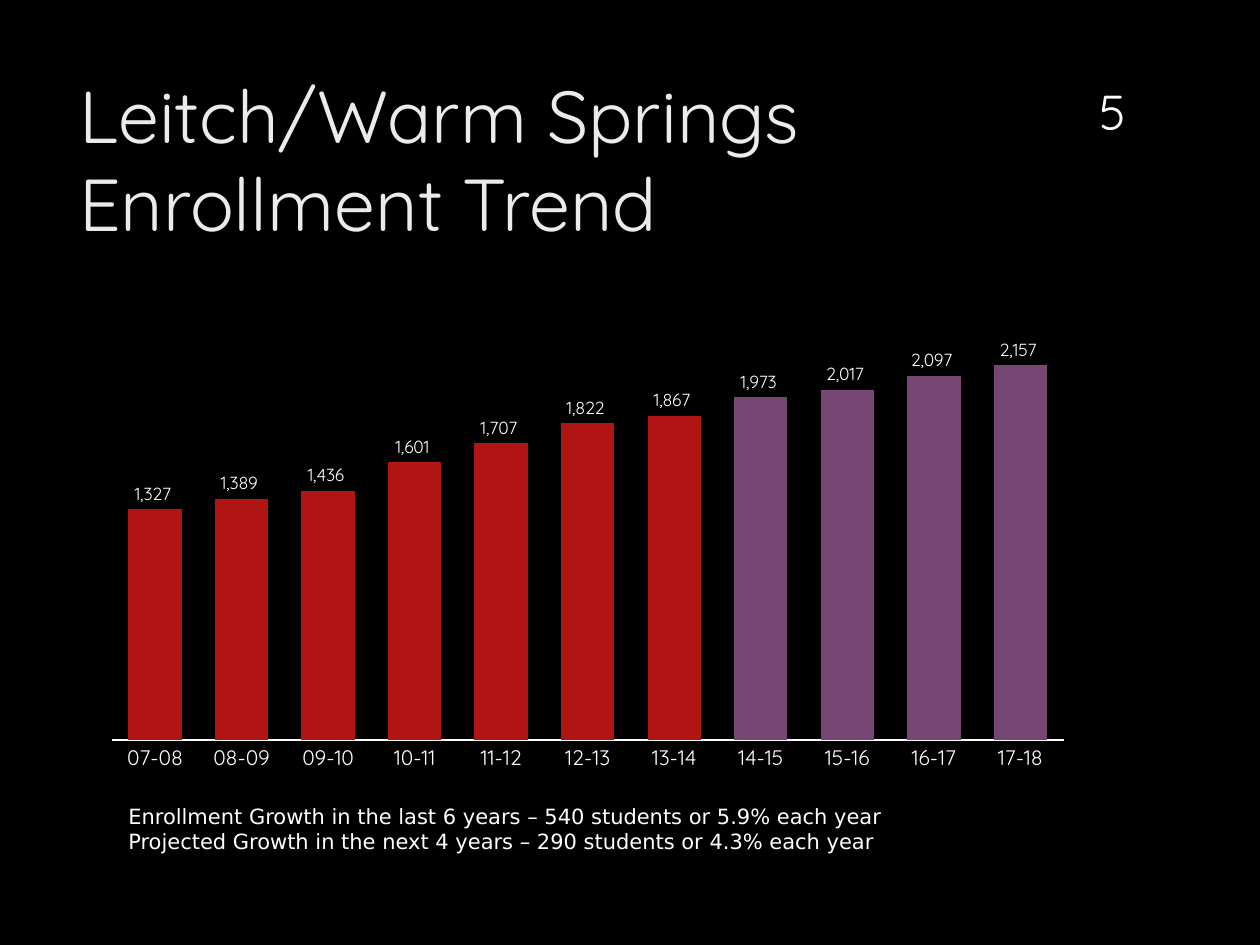
from lxml import etree
from pptx import Presentation, util as u
from pptx.chart.data import CategoryChartData
from pptx.dml.color import RGBColor
from pptx.enum import chart as ch, text
from pptx.oxml import ns

BLACK = RGBColor(0x00, 0x00, 0x00)
WHITE = RGBColor(0xFF, 0xFF, 0xFF)
PALE = RGBColor(0xEB, 0xEB, 0xEB)
RED = RGBColor(0xB0, 0x15, 0x13)
PURPLE = RGBColor(0x76, 0x46, 0x74)
HEAD_FONT, NOTE_FONT = "Quicksand", "DejaVu Sans"
NUMBER_FORMAT = r"#,##0_);\(#,##0\)"

WIDTH, HEIGHT = 10, 7.5
FIRST_YEAR = 7
ENROLLMENT = [1327, 1389, 1436, 1601, 1707, 1822, 1867,
              1973, 2017, 2097, 2157]
FIRST_PROJECTED = 7
GROWTH_NOTES = [
    "Enrollment Growth in the last 6 years – 540 students or 5.9% each year",
    "Projected Growth in the next 4 years – 290 students or 4.3% each year",
]


def area(left, top, width, height):
    """Turn inches into a left, top, width, height box."""
    return tuple(u.Inches(n) for n in (left, top, width, height))


def style_font(font, size, color=WHITE, name=HEAD_FONT):
    font.size = u.Pt(size)
    font.name = name
    font.color.rgb = color


def add_text(s, box, lines, size, color=WHITE, name=HEAD_FONT,
             anchor=text.MSO_ANCHOR.TOP, align=text.PP_ALIGN.LEFT):
    tf = s.shapes.add_textbox(*box).text_frame
    tf.word_wrap = True
    tf.vertical_anchor = anchor
    for i, line in enumerate(lines):
        p = tf.add_paragraph() if i else tf.paragraphs[0]
        p.text = line
        p.alignment = align
        style_font(p.font, size, color, name)


def set_plot_layout(chart, **shares):
    """Fix the inner plot area at x, y, w, h shares of the chart."""
    plot_area = chart._chartSpace.chart.plotArea
    for old in plot_area.findall(ns.qn("c:layout")):
        plot_area.remove(old)
    layout = etree.Element(ns.qn("c:layout"))
    manual = etree.SubElement(layout, ns.qn("c:manualLayout"))
    settings = {"layoutTarget": "inner", "xMode": "edge", "yMode": "edge",
                **shares}
    for tag, value in settings.items():
        etree.SubElement(manual, ns.qn("c:" + tag)).set("val", str(value))
    plot_area.insert(0, layout)


def add_enrollment_chart(s, box):
    data = CategoryChartData(number_format=NUMBER_FORMAT)
    data.categories = [f"{y:02}-{y + 1:02}" for y in
                       range(FIRST_YEAR, FIRST_YEAR + len(ENROLLMENT))]
    data.add_series("Series 1", ENROLLMENT)
    chart = s.shapes.add_chart(
        ch.XL_CHART_TYPE.COLUMN_CLUSTERED, *box, data).chart
    chart.has_legend = chart.has_title = False
    style_font(chart.font, 10)
    set_plot_layout(chart, x=0.02, y=0.02, w=0.96, h=0.9)

    years = chart.category_axis
    years.major_tick_mark = ch.XL_TICK_MARK.NONE
    years.format.line.color.rgb = WHITE
    years.format.line.width = u.Pt(0.75)
    style_font(years.tick_labels.font, 12)

    students = chart.value_axis
    students.visible = students.has_major_gridlines = False
    students.minimum_scale, students.maximum_scale = 0, 2500

    plot = chart.plots[0]
    plot.gap_width, plot.overlap = 62, -27
    plot.vary_by_categories = False
    series = plot.series[0]
    series.format.fill.solid()
    series.format.fill.fore_color.rgb = RED
    for i in range(FIRST_PROJECTED, len(ENROLLMENT)):
        fill = series.points[i].format.fill
        fill.solid()
        fill.fore_color.rgb = PURPLE

    labels = series.data_labels
    labels.show_value = True
    labels.position = ch.XL_LABEL_POSITION.OUTSIDE_END
    labels.number_format = NUMBER_FORMAT
    labels.number_format_is_linked = False
    style_font(labels.font, 10)


def main():
    prs = Presentation()
    prs.slide_width, prs.slide_height = u.Inches(WIDTH), u.Inches(HEIGHT)
    s = prs.slides.add_slide(prs.slide_layouts[6])
    s.background.fill.solid()
    s.background.fill.fore_color.rgb = BLACK

    add_text(s, area(0.53, 0.49, 7.72, 1.53),
             ["Leitch/Warm Springs Enrollment Trend"], 42, PALE,
             anchor=text.MSO_ANCHOR.MIDDLE)
    add_enrollment_chart(s, area(0.73, 2.35, 7.87, 3.83))
    add_text(s, area(8.49, 0.32, 0.69, 0.84), ["5"], 28,
             anchor=text.MSO_ANCHOR.BOTTOM, align=text.PP_ALIGN.CENTER)
    add_text(s, area(0.92, 6.33, 7.69, 0.5), GROWTH_NOTES, 12, name=NOTE_FONT)
    prs.save("out.pptx")


if __name__ == "__main__":
    main()
